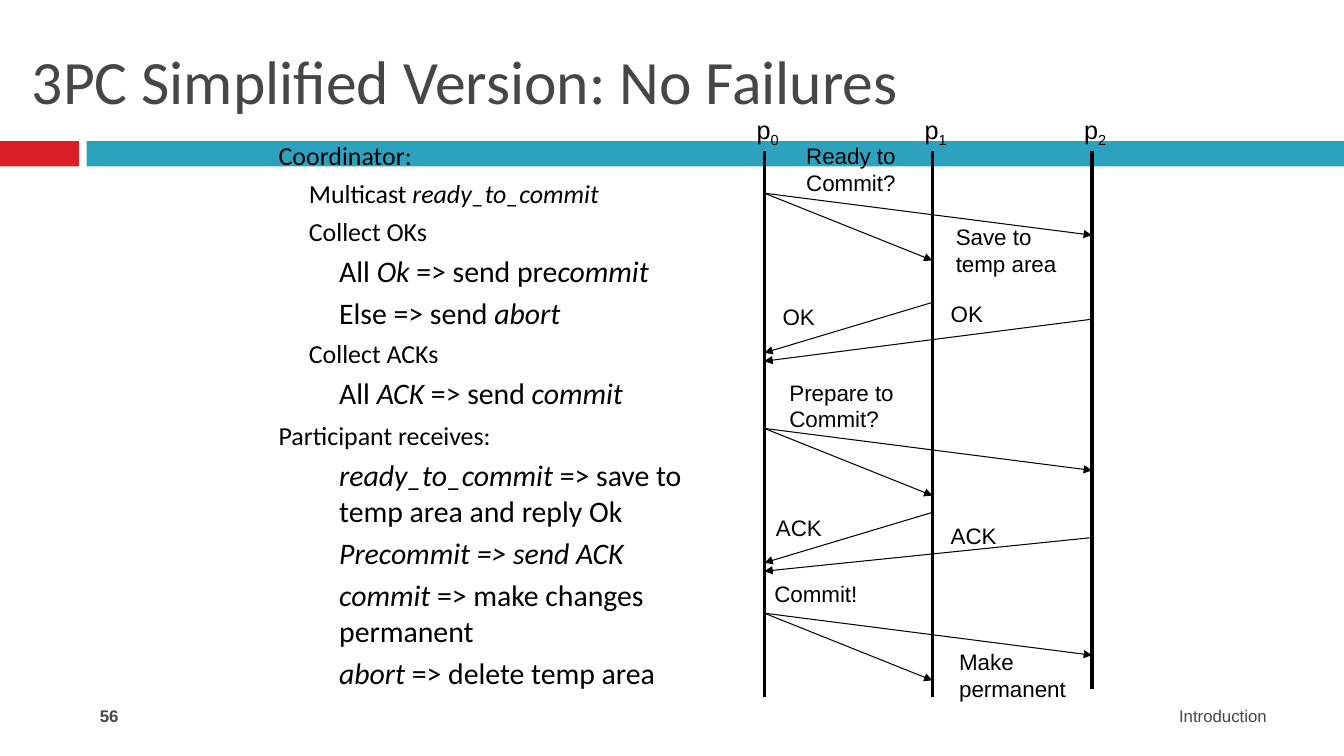
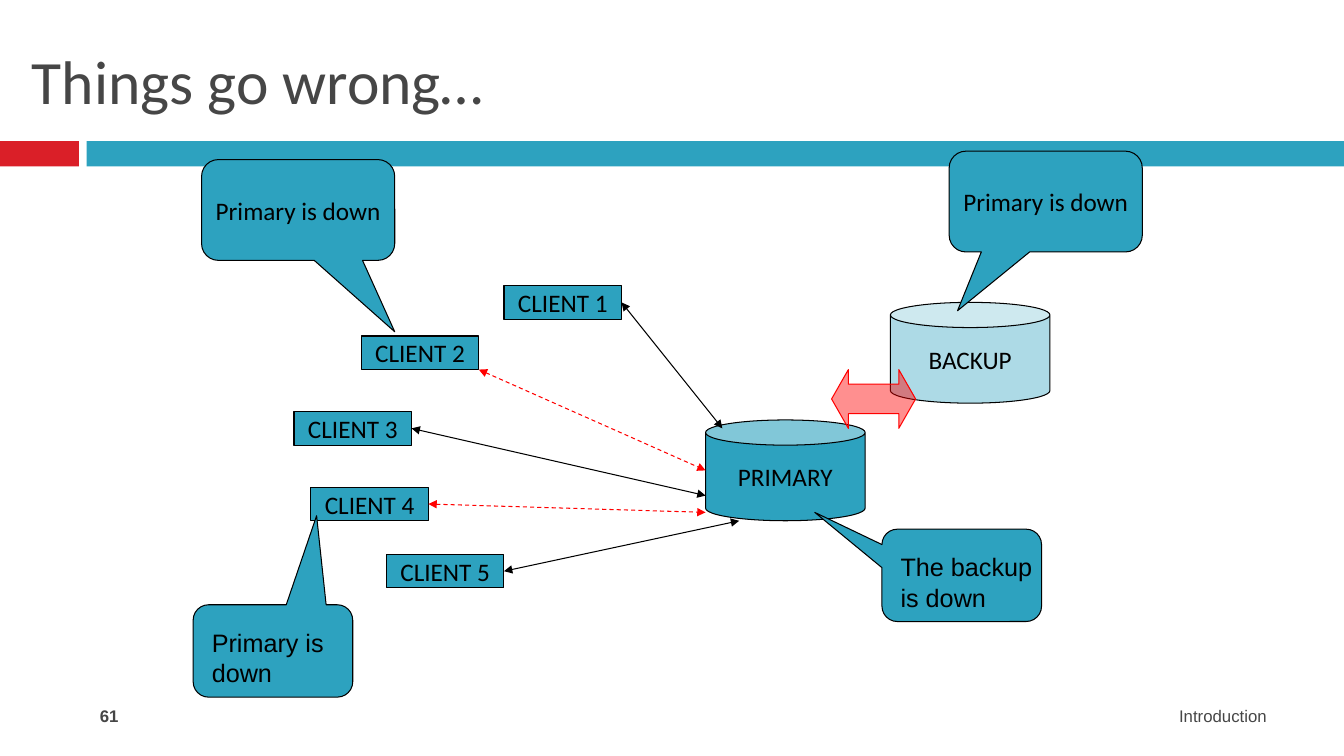
from lxml import etree
from pptx import Presentation
from pptx.dml.color import RGBColor
from pptx.enum.dml import MSO_LINE
from pptx.enum.shapes import MSO_CONNECTOR, MSO_SHAPE
from pptx.enum.text import MSO_ANCHOR, PP_ALIGN
from pptx.oxml.ns import qn
from pptx.util import Inches, Pt

LEFT, MID, RIGHT = PP_ALIGN.LEFT, PP_ALIGN.CENTER, PP_ALIGN.RIGHT
RECT, CAN = MSO_SHAPE.RECTANGLE, MSO_SHAPE.CAN
BUBBLE, DOUBLE = MSO_SHAPE.ROUNDED_RECTANGULAR_CALLOUT, MSO_SHAPE.LEFT_RIGHT_ARROW
STRAIGHT, DASH = MSO_CONNECTOR.STRAIGHT, MSO_LINE.DASH
TOP, CENTRE = MSO_ANCHOR.TOP, MSO_ANCHOR.MIDDLE

INK = {"black": "000000", "grey": "464646", "teal": "2DA2BF",
       "crimson": "DA1F28", "red": "FF0000"}
INK = {name: RGBColor.from_string(code) for name, code in INK.items()}

# The slide is a grid of 160 columns by 90 rows
CELL = Inches(1) // 12
deck = Presentation()
deck.slide_width, deck.slide_height = 160 * CELL, 90 * CELL


def put(slide, kind, box, text="", fill=None, edge=None, alpha=None,
        size=18, face="Calibri", ink="black", align=MID):
    """Add a shape, or a text box when kind is None; *stars* mark italics."""
    spot = [int(n * CELL) for n in box]
    if kind is None:
        shape = slide.shapes.add_textbox(*spot)
    else:
        shape = slide.shapes.add_shape(kind, *spot)
        shape.shadow.inherit = False
        shape.fill.solid()
        shape.fill.fore_color.rgb = INK[fill]
        if alpha:
            tint = shape.element.spPr.find(".//" + qn("a:srgbClr"))
            etree.SubElement(tint, qn("a:alpha"), val=str(alpha * 1000))
        if edge:
            shape.line.color.rgb = INK[edge]
            shape.line.width = Pt(0.75)
        else:
            shape.line.fill.background()
    frame = shape.text_frame
    frame.word_wrap = kind is None
    frame.vertical_anchor = TOP if kind is None else CENTRE
    for i, line in enumerate(text.split("\n") if text else []):
        para = frame.add_paragraph() if i else frame.paragraphs[0]
        para.alignment = align
        font = para.font
        font.name, font.size, font.color.rgb = face, Pt(size), INK[ink]
        for j, part in enumerate(line.split("*")):
            if part:
                run = para.add_run()
                run.text = part
                if j % 2:
                    run.font.italic = True
    return shape


def link(slide, start, end, ink="black", width=0.75, dash=None, ends=("tailEnd",)):
    """Add a straight line from start to end, with arrowheads at its ends."""
    line = slide.shapes.add_connector(
        STRAIGHT, *[int(n * CELL) for n in (*start, *end)])
    line.line.color.rgb = INK[ink]
    line.line.width = Pt(width)
    if dash:
        line.line.dash_style = dash
    props = line.element.spPr
    for end_tag in ends:
        etree.SubElement(props.find(qn("a:ln")), qn("a:" + end_tag), type="triangle")
    etree.SubElement(props, qn("a:effectLst"))
    return line


# Shared frame: bands, title, footers
pages = []
for head, number in (("3PC Simplified Version: No Failures", "56"),
                     ("Things go wrong…", "61")):
    page = deck.slides.add_slide(deck.slide_layouts[5])
    pages.append(page)
    put(page, RECT, (0, 16.8, 9.4, 3), fill="crimson")
    put(page, RECT, (10.3, 16.8, 149.7, 3), fill="teal")
    title = page.shapes.title
    title.left, title.top, title.width, title.height = [
        int(n * CELL) for n in (2.6, 3, 154.7, 13)]
    title.text_frame.text = head
    title.text_frame.vertical_anchor = CENTRE
    para = title.text_frame.paragraphs[0]
    para.alignment = LEFT
    para.font.name, para.font.size = "Calibri", Pt(44)
    para.font.color.rgb = INK["grey"]
    put(page, None, (90.7, 83.4, 61.3, 4.8), "Introduction",
        size=12, face="Arial", ink="grey", align=RIGHT)
    num = put(page, None, (10.7, 83.4, 34.7, 4.8), number,
              size=12, face="Arial", ink="grey", align=LEFT)
    num.text_frame.paragraphs[0].font.bold = True
proto, fault = pages

# Slide 1: protocol steps, each with its level
steps = [
    (0, "Coordinator:"),
    (1, "Multicast *ready_to_commit*"),
    (1, "Collect OKs"),
    (2, "All *Ok* => send pre*commit*"),
    (2, "Else => send *abort*"),
    (1, "Collect ACKs"),
    (2, "All *ACK* => send *commit*"),
    (0, "Participant receives:"),
    (2, "*ready_to_commit* => save to temp area and reply Ok"),
    (2, "*Precommit => send ACK*"),
    (2, "*commit* => make changes permanent"),
    (2, "*abort* => delete temp area"),
]
body = put(proto, None, (32, 16, 58, 64.8), "\n".join(t for _, t in steps), align=LEFT)
for para, (level, _) in zip(body.text_frame.paragraphs, steps):
    para.level = level
    para.font.size = Pt((18.5, 18.5, 21.3)[level])
    para.space_before = Pt((6.3, 5, 4.5)[level])
    props = para._p.get_or_add_pPr()
    props.set("marL", str(Inches(0.3 * level)))
    props.set("indent", "0")

# Slide 1: time lines of the three processes
lanes = (91, 111, 130)
for i, (x, foot) in enumerate(zip(lanes, (83, 83, 82))):
    link(proto, (x, 18), (x, foot), width=2.5, ends=())
    name = put(proto, None, (x - 2.1, 13, 6, 4.8), "p", face="Arial", align=LEFT)
    sub = name.text_frame.paragraphs[0].add_run()
    sub.text = str(i)
    sub._r.get_or_add_rPr().set("baseline", "-25000")

# Slide 1: messages out and replies back
for y in (23, 51, 73):
    link(proto, (lanes[0], y), (lanes[2], y + 5))
    link(proto, (lanes[0], y), (lanes[1], y + 8))
for near, far in ((36, 38), (61, 64)):
    link(proto, (lanes[1], near), (lanes[0], near + 6))
    link(proto, (lanes[2], far), (lanes[0], near + 7))

# Slide 1: message labels (column, row, width, lines of text)
for x, y, w, rows, text in (
        (94.8, 16.3, 14, 2, "Ready to\nCommit?"),
        (112.6, 26, 16.4, 2, "Save to temp area"),
        (92, 35.5, 7, 1, "OK"),
        (112, 35.2, 7, 1, "OK"),
        (92.8, 44.5, 25.2, 2, "Prepare to\nCommit?"),
        (91.2, 60.6, 9, 1, "ACK"),
        (112, 61.6, 9, 1, "ACK"),
        (91, 68.5, 14, 1, "Commit!"),
        (113, 76.6, 16, 2, "Make\npermanent")):
    put(proto, None, (x, y, w, 1.2 + 3.25 * rows), text,
        size=16, face="Arial", align=LEFT)

# Slide 2: clients, servers and the broken link between servers
spots = ((60, 34), (43, 40), (35, 49), (37, 58), (46, 66))
boxes = [put(fault, RECT, (x, y, 14, 4), f"CLIENT {i}", "teal", "black")
         for i, (x, y) in enumerate(spots, 1)]
put(fault, CAN, (106, 36, 19, 12), "BACKUP", "teal", "black", alpha=39)
put(fault, CAN, (84, 50, 19, 12), "PRIMARY", "teal", "black")
swap = put(fault, DOUBLE, (99, 44, 10, 7), fill="red", edge="red", alpha=44)
swap.adjustments[1] = 0.286

# Slide 2: client links; the second leaves from a corner
goals = ((86, 51), (84, 56), (84, 59), (84, 61), (88, 62))
for i, ((x, y), goal) in enumerate(zip(spots, goals)):
    down, corner = i in (1, 3), i == 1
    line = link(fault, (x + 14, y + (4 if corner else 2)), goal,
                "red" if down else "black", dash=DASH if down else None,
                ends=("headEnd", "tailEnd"))
    if not corner:
        line.begin_connect(boxes[i], 3)

# Slide 2: callouts, each with the point of its tail
for (x, y, w, h), tip, text, face in (
        ((113, 18, 23, 12), (114, 37), "Primary is down", "Calibri"),
        ((105, 63, 19, 11), (97, 61), "The backup\nis down", "Arial"),
        ((24, 19, 23, 12), (47, 39.5), "Primary is down", "Calibri"),
        ((23, 72, 19, 11), (37.7, 61.4), "Primary is\ndown", "Arial")):
    note = put(fault, BUBBLE, (x, y, w, h), text, "teal", "black",
               face=face, align=LEFT if "\n" in text else MID)
    note.adjustments[0] = (tip[0] - x) / w - 0.5
    note.adjustments[1] = (tip[1] - y) / h - 0.5
    if "\n" in text:
        frame = note.text_frame
        frame.word_wrap = True
        frame.margin_left, frame.margin_right = Inches(0.14), 0
        frame.margin_top = Inches(0.18)

deck.save("out.pptx")
